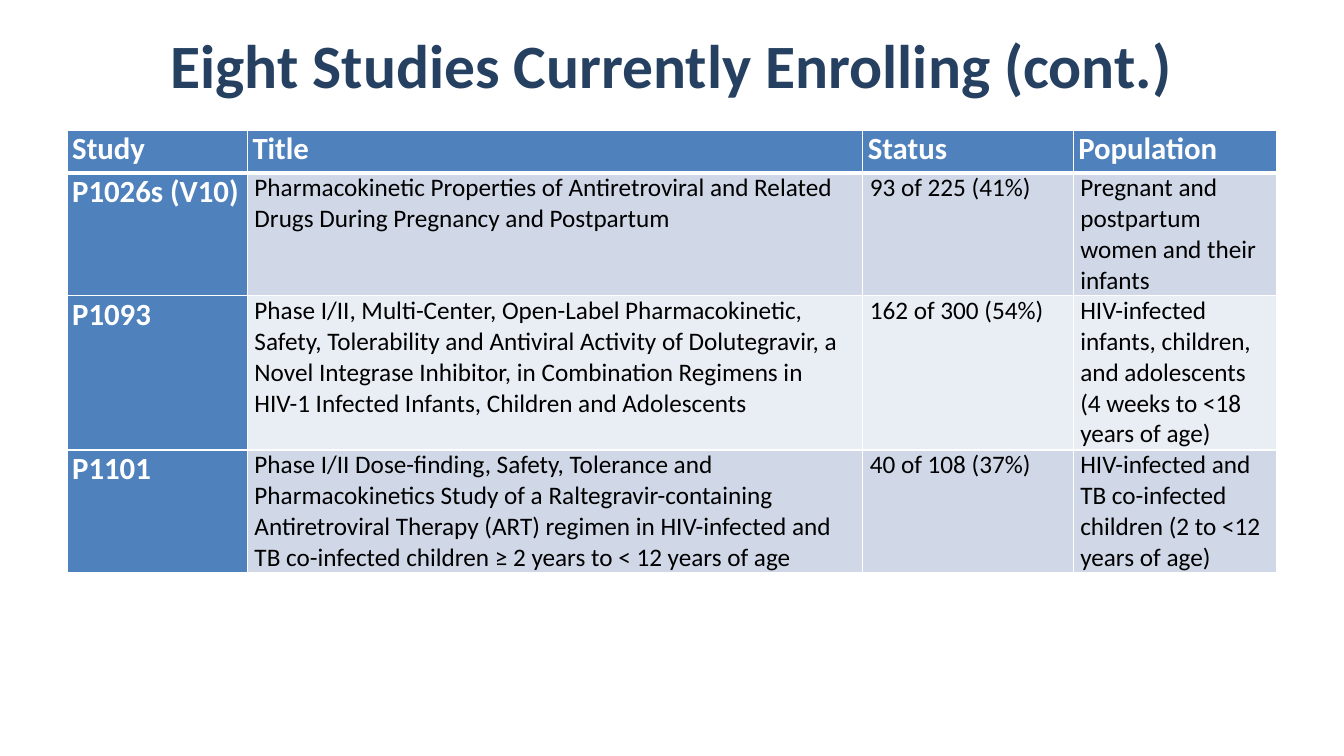
from dataclasses import dataclass

from lxml.etree import SubElement
from pptx import Presentation
from pptx.dml.color import RGBColor
from pptx.enum.text import MSO_ANCHOR, PP_ALIGN
from pptx.oxml.ns import qn
from pptx.slide import Slide
from pptx.table import Table
from pptx.text.text import _Paragraph as Paragraph
from pptx.util import Inches, Length, Pt


@dataclass(frozen=True)
class Theme:
    font: str = "Calibri"
    title_color: str = "254061"
    accent: str = "4F81BD"
    bands: tuple[str, str] = ("D0D8E8", "E9EDF4")
    light: str = "FFFFFF"
    dark: str = "000000"
    title_size: int = 44
    heading_size: int = 22
    body_size: int = 18
    thin_line: int = 1
    thick_line: int = 3


@dataclass(frozen=True)
class Study:
    code: str
    title: tuple[str, ...]  # one entry per paragraph
    status: str
    population: str


@dataclass(frozen=True)
class CellStyle:
    fill: str
    color: str
    size: int
    bold: bool
    inset: float


THEME = Theme()
WIDTH, HEIGHT = Inches(13.33), Inches(7.5)

# Shares of the slide's size
MARGIN = 0.05
TITLE_HEIGHT = 0.17
COLUMN_WEIGHTS = (1.79, 6.11, 2.09, 2.02)
ROW_HEIGHTS = (0.42, 1.22, 1.53, 1.22)  # inches

HEADINGS = ("Study", "Title", "Status", "Population")
STUDIES = (
    Study(
        "P1026s (V10)",
        ("Pharmacokinetic Properties of Antiretroviral and Related Drugs "
         "During Pregnancy and Postpartum",),
        "93 of 225 (41%)",
        "Pregnant and postpartum women and their infants",
    ),
    Study(
        "P1093",
        ("Phase I/II, Multi-Center, Open-Label Pharmacokinetic, Safety, Tolerability "
         "and Antiviral Activity of Dolutegravir, a Novel Integrase Inhibitor, "
         "in Combination Regimens in",
         "HIV-1 Infected Infants, Children and Adolescents"),
        "162 of 300 (54%)",
        "HIV-infected infants, children, and adolescents (4 weeks to <18 years of age)",
    ),
    Study(
        "P1101",
        ("Phase I/II Dose-finding, Safety, Tolerance and Pharmacokinetics Study of a "
         "Raltegravir-containing Antiretroviral Therapy (ART) regimen in HIV-infected "
         "and TB co-infected children ≥ 2 years to < 12 years of age",),
        "40 of 108 (37%)",
        "HIV-infected and TB co-infected children (2 to <12 years of age)",
    ),
)


def across(share: float) -> Length:
    return Length(round(WIDTH * share))


def down(share: float) -> Length:
    return Length(round(HEIGHT * share))


def add_run(paragraph: Paragraph, text: str, size: int, color: str, bold: bool) -> None:
    run = paragraph.add_run()
    run.text = text
    run.font.name = THEME.font
    run.font.size = Pt(size)
    run.font.bold = bold
    run.font.color.rgb = RGBColor.from_string(color)


def add_title(slide: Slide, text: str) -> None:
    shape = slide.shapes.add_textbox(
        across(MARGIN), 0, across(1 - 2 * MARGIN), down(TITLE_HEIGHT))
    frame = shape.text_frame
    frame.word_wrap = True
    frame.vertical_anchor = MSO_ANCHOR.MIDDLE
    paragraph = frame.paragraphs[0]
    paragraph.alignment = PP_ALIGN.CENTER
    add_run(paragraph, text, THEME.title_size, THEME.title_color, True)


def cell_style(row: int, column: int) -> CellStyle:
    if row == 0 or column == 0:
        return CellStyle(THEME.accent, THEME.light, THEME.heading_size, True, 0.05)
    band = THEME.bands[(row - 1) % len(THEME.bands)]
    return CellStyle(band, THEME.dark, THEME.body_size, False, 0.07)


def fill_cell(table: Table, row: int, column: int, texts: tuple[str, ...]) -> None:
    cell = table.cell(row, column)
    style = cell_style(row, column)
    cell.margin_left = cell.margin_right = Inches(style.inset)
    cell.margin_top = cell.margin_bottom = 0

    # Borders: the rule under the headings is thicker
    properties = cell._tc.get_or_add_tcPr()
    for side in ("lnL", "lnR", "lnT", "lnB"):
        under_headings = (row, side) in ((0, "lnB"), (1, "lnT"))
        points = THEME.thick_line if under_headings else THEME.thin_line
        line = SubElement(properties, qn(f"a:{side}"), w=str(Pt(points)))
        line_fill = SubElement(line, qn("a:solidFill"))
        SubElement(line_fill, qn("a:srgbClr"), val=THEME.light)

    cell.fill.solid()
    cell.fill.fore_color.rgb = RGBColor.from_string(style.fill)

    frame = cell.text_frame
    for index, text in enumerate(texts):
        paragraph = frame.add_paragraph() if index else frame.paragraphs[0]
        add_run(paragraph, text, style.size, style.color, style.bold)


def add_study_table(slide: Slide) -> None:
    width = across(1 - 2 * MARGIN)
    table = slide.shapes.add_table(
        len(STUDIES) + 1, len(HEADINGS), across(MARGIN), down(TITLE_HEIGHT) + Inches(0.02),
        width, Inches(sum(ROW_HEIGHTS))).table
    for column, weight in zip(table.columns, COLUMN_WEIGHTS):
        column.width = Length(round(width * weight / sum(COLUMN_WEIGHTS)))
    for row, height in zip(table.rows, ROW_HEIGHTS):
        row.height = Inches(height)

    rows = [[(heading,) for heading in HEADINGS]]
    rows += [[(study.code,), study.title, (study.status,), (study.population,)]
             for study in STUDIES]
    for row_index, row_texts in enumerate(rows):
        for column_index, texts in enumerate(row_texts):
            fill_cell(table, row_index, column_index, texts)


def main() -> None:
    presentation = Presentation()
    presentation.slide_width, presentation.slide_height = WIDTH, HEIGHT
    slide = presentation.slides.add_slide(presentation.slide_layouts[6])
    add_title(slide, "Eight Studies Currently Enrolling (cont.)")
    add_study_table(slide)
    presentation.save("out.pptx")


if __name__ == "__main__":
    main()
